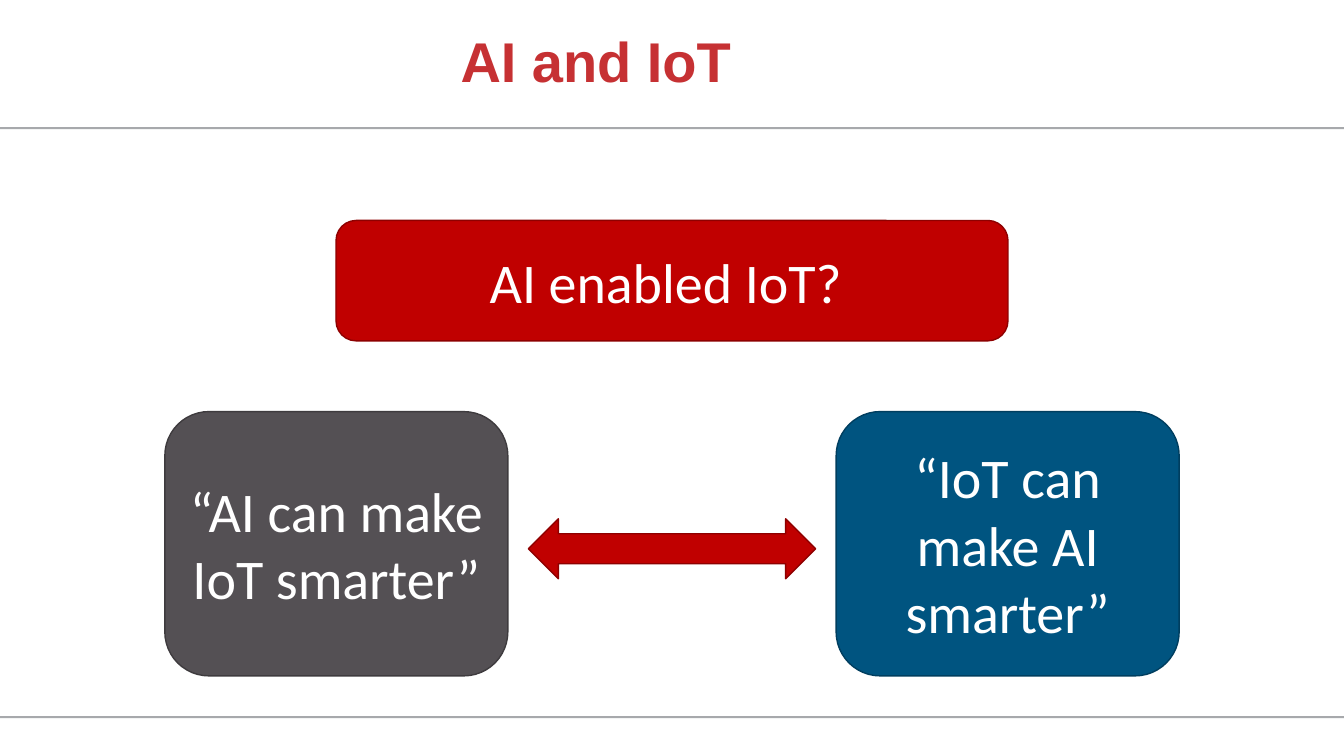
from pptx import Presentation
from pptx.dml.color import RGBColor
from pptx.enum.shapes import MSO_SHAPE
from pptx.enum.text import MSO_ANCHOR, PP_ALIGN
from pptx.util import Pt

SLIDE_WIDTH, SLIDE_HEIGHT = 960, 540
RED, DARK_RED = "C00000", "8E0000"


def color(hex_text):
    return RGBColor.from_string(hex_text)


def write(shape, text, size=40, font="Calibri", fill="FFFFFF", bold=False, spacing=1.0):
    frame = shape.text_frame
    frame.word_wrap = True
    frame.vertical_anchor = MSO_ANCHOR.MIDDLE
    frame.margin_left = frame.margin_right = Pt(7.2)
    frame.margin_top = frame.margin_bottom = Pt(3.6)
    paragraph = frame.paragraphs[0]
    paragraph.alignment = PP_ALIGN.CENTER
    paragraph.line_spacing = spacing
    run = paragraph.add_run()
    run.text = text
    run.font.size, run.font.name, run.font.bold = Pt(size), font, bold
    run.font.color.rgb = color(fill)


def add_block(slide, kind, left, top, width, height, fill, outline=None):
    block = slide.shapes.add_shape(kind, Pt(left), Pt(top), Pt(width), Pt(height))
    block.shadow.inherit = False
    block.fill.solid()
    block.fill.fore_color.rgb = color(fill)
    if outline:
        block.line.color.rgb = color(outline)
        block.line.width = Pt(1)
    else:
        block.line.fill.background()
    return block


def add_title(slide, text):
    title = slide.shapes.title
    title.left, title.top, title.width, title.height = Pt(0), Pt(0), Pt(851), Pt(92)
    write(title, text, font="Arial", fill="C63133", bold=True, spacing=0.9)


def main():
    deck = Presentation()
    deck.slide_width, deck.slide_height = Pt(SLIDE_WIDTH), Pt(SLIDE_HEIGHT)
    slide = deck.slides.add_slide(deck.slide_layouts[5])

    # Header and footer rules
    for rule_top in (90.8, 511.6):
        add_block(slide, MSO_SHAPE.RECTANGLE, 0, rule_top, SLIDE_WIDTH, 1.4, "A7A9AC")

    add_title(slide, "AI and IoT")

    # Central question; the trailing space sets the text slightly left of centre
    question = add_block(slide, MSO_SHAPE.ROUNDED_RECTANGLE, 240, 157.5, 480, 86, RED, DARK_RED)
    write(question, "AI enabled IoT? ")

    # Two claims, mirrored about the slide centre
    claim_width, claim_margin = 245, 117.75
    claims = [
        ("“AI can make IoT smarter”", claim_margin, "545054", "3E3B3E"),
        ("“IoT can make AI smarter”", SLIDE_WIDTH - claim_margin - claim_width, "005480", "003E5F"),
    ]
    for text, left, fill, outline in claims:
        claim = add_block(slide, MSO_SHAPE.ROUNDED_RECTANGLE, left, 294, claim_width, 188.75, fill, outline)
        write(claim, text)

    # Arrow between the claims
    add_block(slide, MSO_SHAPE.LEFT_RIGHT_ARROW, 377.4, 370.6, 205.2, 42.8, RED, DARK_RED)

    deck.save("out.pptx")


if __name__ == "__main__":
    main()
